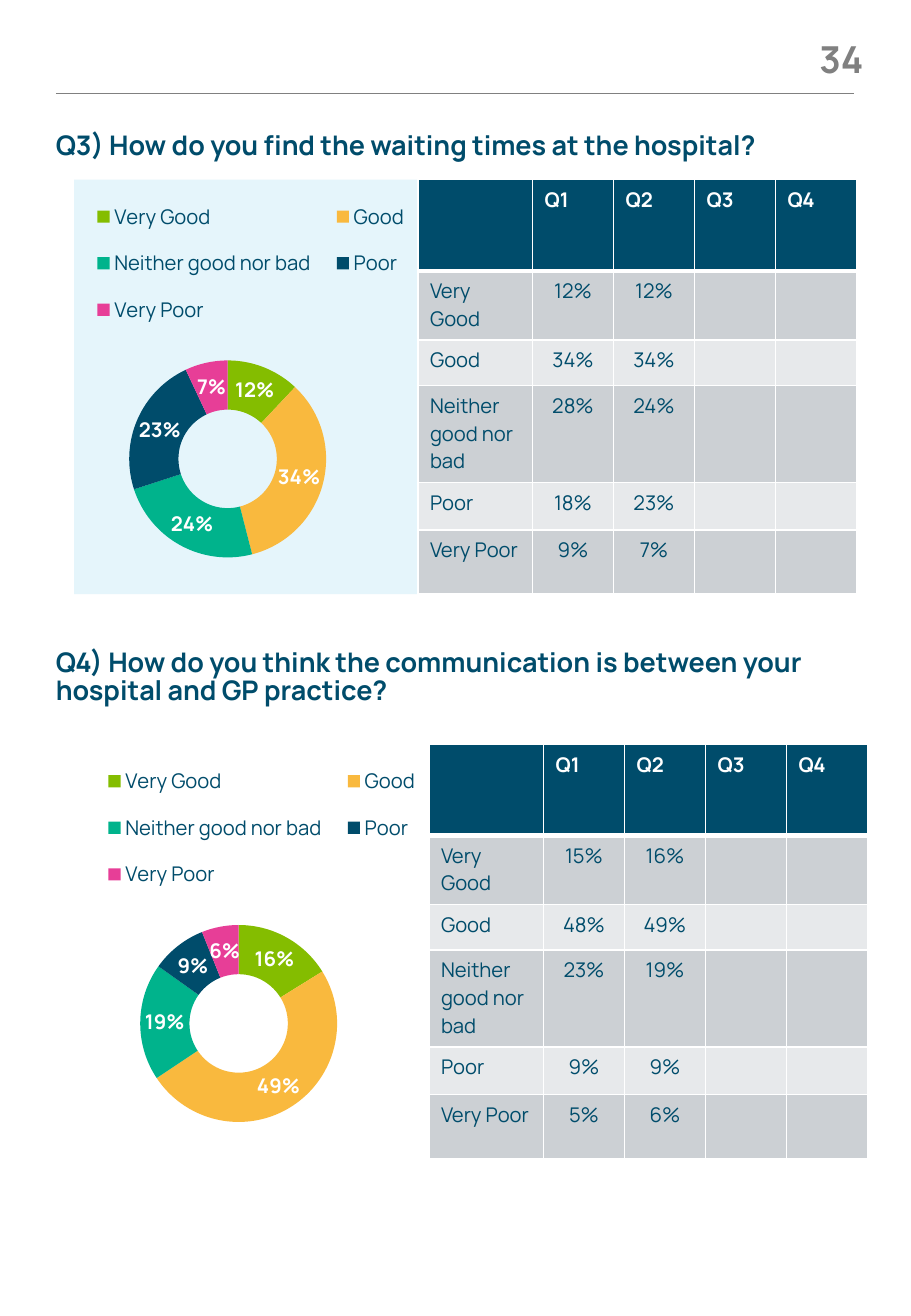
from dataclasses import dataclass

import pptx
import pptx.chart.data
import pptx.dml.color
import pptx.dml.fill
import pptx.enum.chart
import pptx.enum.shapes
import pptx.enum.text
import pptx.oxml
import pptx.oxml.ns
import pptx.shapes.base
import pptx.slide
import pptx.table
import pptx.text.text
import pptx.util
from lxml import etree

Pt = pptx.util.Pt
Align = pptx.enum.text.PP_ALIGN

FONT = "Manrope"
NAVY, GREY, WHITE = "004C6B", "808080", "FFFFFF"
BANDS = ("CCD0D4", "E7E9EB")
ANSWERS = ("Very Good", "Good", "Neither good nor bad", "Poor", "Very Poor")
ANSWER_COLOURS = ("84BD00", "F9B93E", "00B38C", NAVY, "E73E97")
QUARTERS = ("Q1", "Q2", "Q3", "Q4")
COLUMN_WIDTHS = (68, 48, 48, 48, 48)
ROW_HEIGHTS = (54, 41, 27, 57.5, 28, 38)
CHART_WIDTH, CHART_HEIGHT = 220.3, 260.6
TABLE_OFFSET = 210.3


@dataclass
class Survey:
    left: float
    top: float
    quarter_1: tuple[int, ...]
    quarter_2: tuple[int, ...]


SURVEYS = (
    Survey(37.4, 106.5, (12, 34, 28, 18, 9), (12, 34, 24, 23, 7)),
    Survey(43.9, 441, (15, 48, 23, 9, 5), (16, 49, 19, 9, 6)),
)


def colour(hex_code: str) -> pptx.dml.color.RGBColor:
    return pptx.dml.color.RGBColor.from_string(hex_code)


def paint(fill: pptx.dml.fill.FillFormat, hex_code: str) -> None:
    fill.solid()
    fill.fore_color.rgb = colour(hex_code)


def style_font(font: pptx.text.text.Font, size: float, hex_code: str, bold: bool = False) -> None:
    font.name = FONT
    font.size = Pt(size)
    font.bold = bold
    font.color.rgb = colour(hex_code)


def write(para, text: str, size: float, hex_code: str, bold: bool = False, align=Align.LEFT) -> None:
    para.alignment = align
    span = para.add_run()
    span.text = text
    style_font(span.font, size, hex_code, bold)


def prepare_frame(box: pptx.shapes.base.BaseShape, left: float, top: float, width: float, height: float):
    box.left, box.top, box.width, box.height = Pt(left), Pt(top), Pt(width), Pt(height)
    frame = box.text_frame
    frame.margin_left = frame.margin_right = frame.margin_top = frame.margin_bottom = 0
    frame.word_wrap = True
    frame.auto_size = pptx.enum.text.MSO_AUTO_SIZE.NONE
    frame.vertical_anchor = pptx.enum.text.MSO_ANCHOR.TOP
    return frame.paragraphs[0]


def write_heading(box: pptx.shapes.base.BaseShape, top: float, width: float, height: float, text: str) -> None:
    para = prepare_frame(box, 33.1, top, width, height)
    para.line_spacing = Pt(17)
    para.space_before = Pt(0)
    para.space_after = Pt(9)
    write(para, text, 16, NAVY, True)


def add_layout(element, after: str, **places: float | str) -> None:
    """Give a chart part a manual layout, placed after the named child."""
    anchor = element.find(pptx.oxml.ns.qn(after)) if after else None
    for old in element.findall(pptx.oxml.ns.qn("c:layout")):
        element.remove(old)
    layout = etree.Element(pptx.oxml.ns.qn("c:layout"))
    manual = etree.SubElement(layout, pptx.oxml.ns.qn("c:manualLayout"))
    for name, value in places.items():
        etree.SubElement(manual, pptx.oxml.ns.qn(f"c:{name}")).set("val", str(value))
    if anchor is None:
        element.insert(0, layout)
    else:
        anchor.addnext(layout)


def add_doughnut(page: pptx.slide.Slide, survey: Survey) -> None:
    data = pptx.chart.data.CategoryChartData(number_format="0")
    data.categories = ANSWERS
    data.add_series("Series 1", survey.quarter_2)
    chart = page.shapes.add_chart(
        pptx.enum.chart.XL_CHART_TYPE.DOUGHNUT, Pt(survey.left), Pt(survey.top),
        Pt(CHART_WIDTH), Pt(CHART_HEIGHT), data).chart
    style_font(chart.font, 10, NAVY)
    chart.has_title = False
    chart.has_legend = True
    legend = chart.legend
    legend.position = pptx.enum.chart.XL_LEGEND_POSITION.TOP
    legend.include_in_layout = False
    style_font(legend.font, 12, NAVY)
    add_layout(legend._element, "c:legendPos", xMode="edge", yMode="edge",
               x=0.04, y=0.01, w=0.93, h=0.36)

    plot = chart.plots[0]
    plot.vary_by_categories = True
    add_layout(plot._element.getparent(), "", layoutTarget="inner", xMode="edge", yMode="edge",
               x=0.178, y=0.411, w=0.53, h=0.448)
    for index, hex_code in enumerate(ANSWER_COLOURS):
        point = plot.series[0].points[index]
        paint(point.format.fill, hex_code)
        point.format.line.fill.background()
    labels = plot.series[0].data_labels
    labels.show_percentage = True
    labels.show_value = False
    labels.number_format = "0%"
    labels.number_format_is_linked = False
    style_font(labels.font, 12, WHITE, True)


def set_borders(cell: pptx.table._Cell, top: float, bottom: float) -> None:
    properties = cell._tc.get_or_add_tcPr()
    for side, width in (("L", 1), ("R", 1), ("T", top), ("B", bottom)):
        line = etree.SubElement(properties, pptx.oxml.ns.qn(f"a:ln{side}"), w=str(Pt(width)))
        solid = etree.SubElement(line, pptx.oxml.ns.qn("a:solidFill"))
        etree.SubElement(solid, pptx.oxml.ns.qn("a:srgbClr"), val=WHITE)


def add_results(page: pptx.slide.Slide, survey: Survey) -> None:
    rows = [("", *QUARTERS)]
    for answer, first, second in zip(ANSWERS, survey.quarter_1, survey.quarter_2):
        rows.append((answer, f"{first}%", f"{second}%", "", ""))
    table = page.shapes.add_table(
        len(rows), len(COLUMN_WIDTHS), Pt(survey.left + TABLE_OFFSET), Pt(survey.top),
        Pt(sum(COLUMN_WIDTHS)), Pt(sum(ROW_HEIGHTS))).table
    table.horz_banding = False
    for column, width in zip(table.columns, COLUMN_WIDTHS):
        column.width = Pt(width)
    for row_index, texts in enumerate(rows):
        table.rows[row_index].height = Pt(ROW_HEIGHTS[row_index])
        header = row_index == 0
        for column_index, text in enumerate(texts):
            cell = table.cell(row_index, column_index)
            set_borders(cell, 3 if row_index == 1 else 1, 3 if header else 1)
            paint(cell.fill, NAVY if header else BANDS[(row_index - 1) % 2])
            para = cell.text_frame.paragraphs[0]
            if text:
                centred = column_index > 0 and not header
                write(para, text, 12, WHITE if header else NAVY, header,
                      Align.CENTER if centred else Align.LEFT)
            else:
                # Keeps an empty cell from stretching its row
                etree.SubElement(para._p, pptx.oxml.ns.qn("a:endParaRPr"), sz="1200")


def main() -> None:
    deck = pptx.Presentation()
    deck.slide_width, deck.slide_height = Pt(540), Pt(779.76)
    page = deck.slides.add_slide(deck.slide_layouts[5])
    shapes = page.shapes

    # Page header
    rule = shapes.add_connector(pptx.enum.shapes.MSO_CONNECTOR.STRAIGHT, Pt(33.1), Pt(55.4), Pt(506.2), Pt(55.4))
    rule.line.color.rgb = colour(GREY)
    rule.line.width = Pt(0.75)
    etree.SubElement(rule._element.spPr, pptx.oxml.ns.qn("a:effectLst"))
    number = shapes.add_textbox(0, 0, 0, 0)
    write(prepare_frame(number, 465.8, 21.6, 46.1, 28.1), "34", 22, GREY, True, Align.RIGHT)

    # Question headings
    write_heading(shapes.title, 78.5, 446.4, 16.6, "Q3) How do you find the waiting times at the hospital?")
    write_heading(shapes.add_textbox(0, 0, 0, 0), 384.5, 478.1, 19.4,
                  "Q4) How do you think the communication is between your hospital and GP practice?")

    # Panel behind the first survey
    panel = shapes.add_shape(pptx.enum.shapes.MSO_SHAPE.RECTANGLE, Pt(44), Pt(106.5), Pt(463.7), Pt(245.5))
    panel.shadow.inherit = False
    paint(panel.fill, "E5F5FB")
    panel.line.fill.background()

    # Charts and tables
    for survey in SURVEYS:
        add_doughnut(page, survey)
        add_results(page, survey)

    deck.save("out.pptx")


if __name__ == "__main__":
    main()
